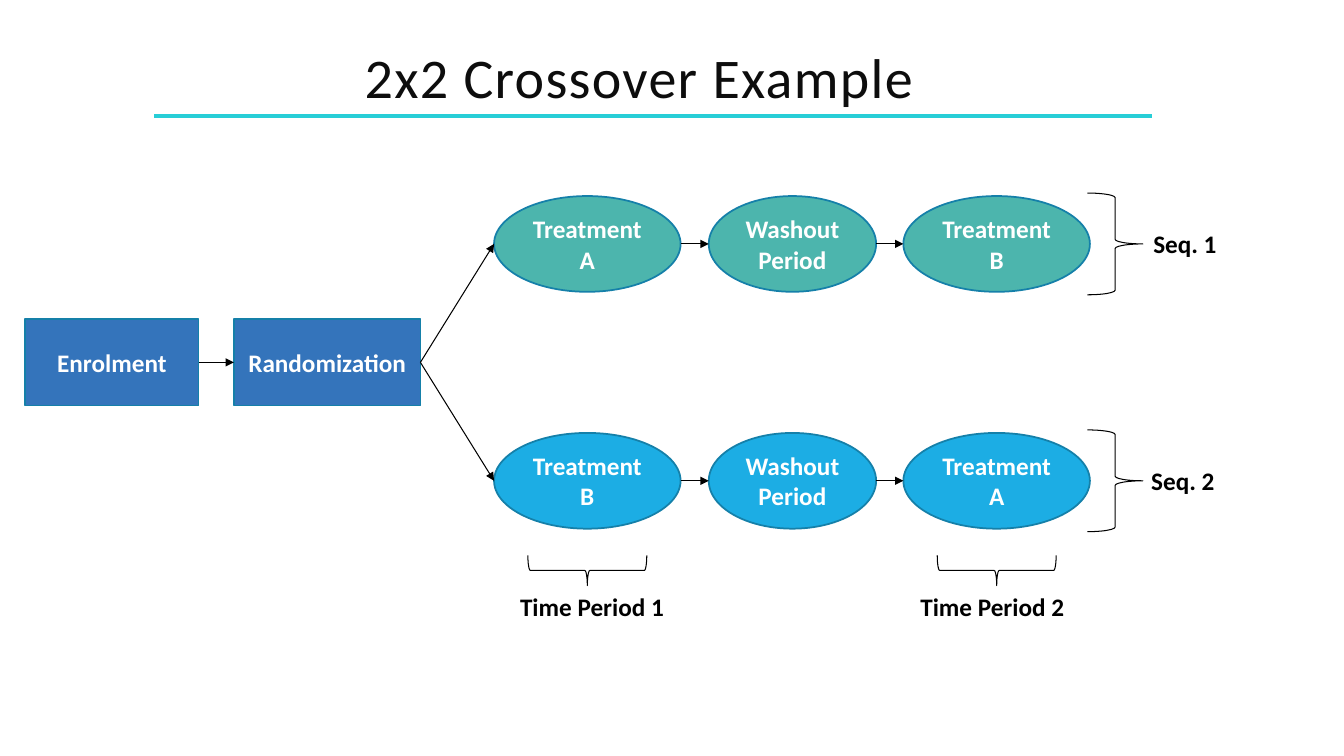
import pptx
import pptx.util
import pptx.dml.color
import pptx.enum.shapes
import pptx.enum.text
import pptx.oxml.ns
import lxml.etree

SHAPE = pptx.enum.shapes.MSO_SHAPE
ALIGN = pptx.enum.text.PP_ALIGN
ANCHOR = pptx.enum.text.MSO_ANCHOR
WIDTH, HEIGHT = 13.33, 7.5

TITLE = "2x2 Crossover Example"
SETUP_STEPS = [("Enrolment", 0.25, 1.72), ("Randomization", 2.32, 1.85)]
SETUP_FILL, SETUP_HEIGHT = "3474BB", 0.86
STAGE_COLUMNS = [(4.9, 1.85), (7.03, 1.66), (8.96, 1.85)]
STAGE_HEIGHT = 0.95
SEQUENCES = [
    ("Seq. 1", 11.34, "4CB5AD", ["Treatment A", "Washout\nPeriod", "Treatment B"]),
    ("Seq. 2", 11.32, "1CADE4", ["Treatment B", "Washout\nPeriod", "Treatment A"]),
]
FIRST_ROW, ROW_STEP = 2.42, 2.35
PERIODS = [("Time Period 1", 0, 5.06), ("Time Period 2", 2, 9.03)]
PERIOD_BRACE_CENTRE, PERIOD_LABEL_TOP = 5.66, 5.82
OUTLINE, BLACK, WHITE = "1580A9", "000000", "FFFFFF"

presentation = pptx.Presentation()
presentation.slide_width = pptx.util.Inches(WIDTH)
presentation.slide_height = pptx.util.Inches(HEIGHT)
slide = presentation.slides.add_slide(presentation.slide_layouts[6])


def inches(*lengths):
    return [pptx.util.Inches(length) for length in lengths]


def color(value):
    return pptx.dml.color.RGBColor.from_string(value)


def write(shape, text, ink, size=18, bold=True, align=ALIGN.CENTER):
    frame = shape.text_frame
    frame.word_wrap = True
    frame.text = text
    for paragraph in frame.paragraphs:
        paragraph.alignment = align
        for run in paragraph.runs:
            run.font.name = "Calibri"
            run.font.size = pptx.util.Pt(size)
            run.font.bold = bold
            run.font.color.rgb = color(ink)
    return frame


def add_box(kind, text, left, middle, width, height, fill):
    box = slide.shapes.add_shape(kind, *inches(left, middle - height / 2, width, height))
    box.shadow.inherit = False
    box.fill.solid()
    box.fill.fore_color.rgb = color(fill)
    box.line.color.rgb = color(OUTLINE)
    box.line.width = pptx.util.Pt(1.25)
    write(box, text, WHITE).vertical_anchor = ANCHOR.MIDDLE


def add_line(start, end, ink=BLACK, weight=0.75, arrow=True):
    line = slide.shapes.add_connector(
        pptx.enum.shapes.MSO_CONNECTOR.STRAIGHT, *inches(*start, *end))
    line.line.color.rgb = color(ink)
    line.line.width = pptx.util.Pt(weight)
    qn = pptx.oxml.ns.qn
    if arrow:
        lxml.etree.SubElement(line.line._get_or_add_ln(), qn("a:tailEnd"), type="triangle")
    lxml.etree.SubElement(line._element.spPr, qn("a:effectLst"))


def add_brace(centre, middle, width, height, rotation=0):
    brace = slide.shapes.add_shape(
        SHAPE.RIGHT_BRACE,
        *inches(centre - width / 2, middle - height / 2, width, height))
    brace.rotation = rotation
    brace.shadow.inherit = False
    brace.fill.background()
    brace.line.color.rgb = color(BLACK)
    brace.line.width = pptx.util.Pt(0.75)


def add_label(text, left, top, width):
    label = slide.shapes.add_textbox(*inches(left, top, width, 0.4))
    write(label, text, BLACK, align=ALIGN.LEFT)


add_line((1.53, 1.15), (11.43, 1.15), "27CED7", 3, arrow=False)
title = slide.shapes.add_textbox(*inches(1.32, 0.2, 10.04, 1.23))
title_frame = write(title, TITLE, "0D0D0D", 40, False)
title_frame.vertical_anchor = ANCHOR.MIDDLE
title_frame.paragraphs[0].line_spacing = 0.8
title_frame.paragraphs[0].runs[0].font._element.set("spc", "100")

rows = [FIRST_ROW + index * ROW_STEP for index in range(len(SEQUENCES))]
setup_row = sum(rows) / len(rows)
for text, left, width in SETUP_STEPS:
    add_box(SHAPE.RECTANGLE, text, left, setup_row, width, SETUP_HEIGHT, SETUP_FILL)
enrolment_end, randomization_end = [left + width for text, left, width in SETUP_STEPS]
add_line((enrolment_end, setup_row), (SETUP_STEPS[1][1], setup_row))

for row, (name, label_left, fill, stages) in zip(rows, SEQUENCES):
    for text, (left, width) in zip(stages, STAGE_COLUMNS):
        add_box(SHAPE.OVAL, text, left, row, width, STAGE_HEIGHT, fill)
    add_line((randomization_end, setup_row), (STAGE_COLUMNS[0][0], row))
    for (left, width), (next_left, next_width) in zip(STAGE_COLUMNS, STAGE_COLUMNS[1:]):
        add_line((left + width, row), (next_left, row))
    add_brace(11.06, row, 0.55, 1.01)
    add_label(name, label_left, row - 0.2, 0.9)

for name, column, label_left in PERIODS:
    left, width = STAGE_COLUMNS[column]
    add_brace(left + width / 2, PERIOD_BRACE_CENTRE, 0.3, 1.18, 90)
    add_label(name, label_left, PERIOD_LABEL_TOP, 1.7)

presentation.save("out.pptx")
